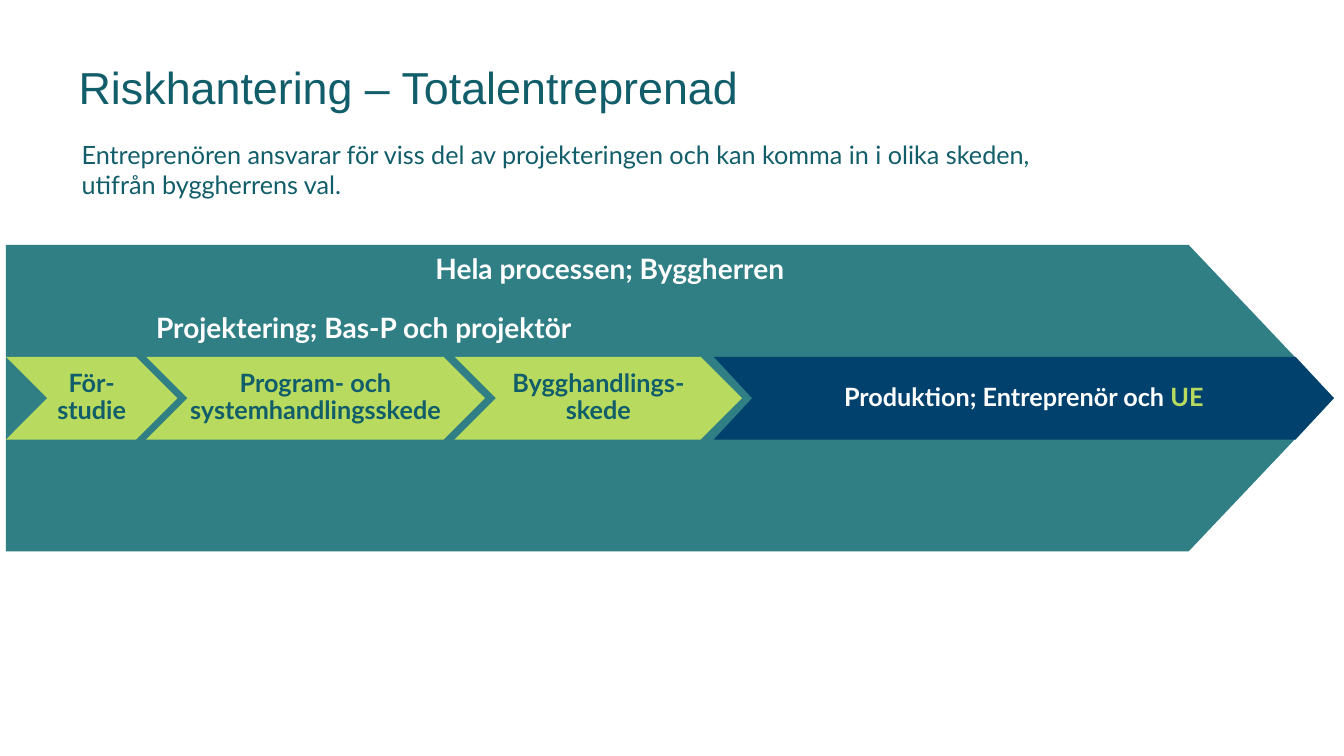
from lxml.etree import SubElement
from pptx import Presentation
from pptx.dml.color import RGBColor
from pptx.enum.text import MSO_ANCHOR as Anchor, MSO_AUTO_SIZE as AutoSize, PP_ALIGN as Align
from pptx.oxml.ns import qn
from pptx.util import Inches, Pt

WIDTH, HEIGHT = 13.33, 7.5
TEAL, DARK_TEAL, LIME, NAVY, WHITE = "307F85", "115E6A", "B8DA5E", "00416D", "FFFFFF"

# Process arrow and the band of phases along its middle
ARROW_LEFT, ARROW_TIP = 0.06, 13.23
ARROW_TOP, ARROW_HEIGHT = 2.43, 3.04
BAND_HEIGHT = 0.82
BAND_TOP = ARROW_TOP + (ARROW_HEIGHT - BAND_HEIGHT) / 2

# Each phase: left, right, point depth, fill, runs of (text, colour)
PHASES = [
    (ARROW_LEFT, 1.76, 0.41, LIME, [("För-studie", DARK_TEAL)]),
    (1.45, 4.81, 0.41, LIME, [("Program- och systemhandlingsskede", DARK_TEAL)]),
    (4.51, 7.36, 0.41, LIME, [("Bygghandlings-skede", DARK_TEAL)]),
    (7.08, ARROW_TIP, 0.38, NAVY, [("Produktion; Entreprenör och ", WHITE), ("UE", LIME)]),
]


def color(value):
    return RGBColor.from_string(value)


def set_font(font, name, size, value, bold=False):
    font.name, font.size, font.bold = name, Pt(size), bold
    font.color.rgb = color(value)


def place(shape, box):
    shape.left, shape.top, shape.width, shape.height = (Inches(length) for length in box)


def set_margins(frame, left, top, right, bottom):
    frame.margin_left, frame.margin_top = Inches(left), Inches(top)
    frame.margin_right, frame.margin_bottom = Inches(right), Inches(bottom)


def add_arrow(shapes, box, point, notch, fill):
    """Arrow whose tip is `point` deep and whose tail is cut `notch` deep."""
    left, top, width, height = box
    right, middle, bottom = left + width, top + height / 2, top + height
    corners = [(left, top), (right - point, top), (right, middle),
               (right - point, bottom), (left, bottom)]
    if notch:
        corners.append((left + notch, middle))
    corners = [(Inches(x), Inches(y)) for x, y in corners]
    builder = shapes.build_freeform(*corners[0], scale=1.0)
    builder.add_line_segments(corners[1:], close=True)
    shape = builder.convert_to_shape()
    shape.shadow.inherit = False
    shape.fill.solid()
    shape.fill.fore_color.rgb = color(fill)
    shape.line.fill.background()
    return shape


def add_header(slide, box):
    left, top, width, height = box
    # Title
    title = slide.shapes.title
    place(title, (left, top, width, height))
    frame = title.text_frame
    frame.text = "Riskhantering – Totalentreprenad"
    frame.vertical_anchor = Anchor.MIDDLE
    frame.auto_size = AutoSize.NONE
    paragraph = frame.paragraphs[0]
    paragraph.alignment, paragraph.line_spacing = Align.LEFT, 0.8
    set_font(paragraph.font, "Arial", 32, DARK_TEAL)

    # Introduction without a bullet
    body = slide.placeholders[1]
    place(body, (left + 0.13, top + 0.72, width - 0.09, 0.71))
    frame = body.text_frame
    frame.text = ("Entreprenören ansvarar för viss del av projekteringen och kan "
                  "komma in i olika skeden,\vutifrån byggherrens val.")
    frame.auto_size = AutoSize.NONE
    set_margins(frame, 0, 0.05, 0.1, 0.05)
    paragraph = frame.paragraphs[0]
    properties = paragraph._p.get_or_add_pPr()
    properties.set("marL", "0")
    properties.set("indent", "0")
    SubElement(properties, qn("a:buNone"))
    paragraph.space_before = Pt(0)
    set_font(paragraph.font, "Lato", 18, DARK_TEAL)


def add_phases(slide, top, height):
    band = slide.shapes.add_group_shape()
    for left, right, point, fill, runs in PHASES:
        box = (left, top, right - left, height)
        frame = add_arrow(band.shapes, box, point, point, fill).text_frame
        frame.word_wrap = True
        frame.vertical_anchor = Anchor.MIDDLE
        set_margins(frame, 0.35, 0.02, 0.35, 0.02)
        paragraph = frame.paragraphs[0]
        paragraph.alignment, paragraph.line_spacing = Align.CENTER, 0.9
        for text, value in runs:
            run = paragraph.add_run()
            run.text = text
            set_font(run.font, "Lato", 18, value, bold=True)


def add_label(slide, box, text):
    label = slide.shapes.add_textbox(*(Inches(length) for length in box))
    frame = label.text_frame
    frame.word_wrap = True
    frame.text = text
    set_font(frame.paragraphs[0].font, "Lato", 20, WHITE, bold=True)


def add_process(slide, box):
    left, top, width, height = box
    add_arrow(slide.shapes, box, 1.44, 0, TEAL)
    add_phases(slide, BAND_TOP, BAND_HEIGHT)
    add_label(slide, (left + 1.39, top + 0.6, 5.14, 0.44), "Projektering; Bas-P och projektör")
    add_label(slide, (left + 4.16, top + 0.02, 4.03, 0.44), "Hela processen; Byggherren")


def main():
    presentation = Presentation()
    presentation.slide_width, presentation.slide_height = Inches(WIDTH), Inches(HEIGHT)
    slide = presentation.slides.add_slide(presentation.slide_layouts[1])
    add_header(slide, (0.68, 0.61, 11.19, 0.6))
    add_process(slide, (ARROW_LEFT, ARROW_TOP, ARROW_TIP - ARROW_LEFT, ARROW_HEIGHT))
    presentation.save("out.pptx")


if __name__ == "__main__":
    main()
